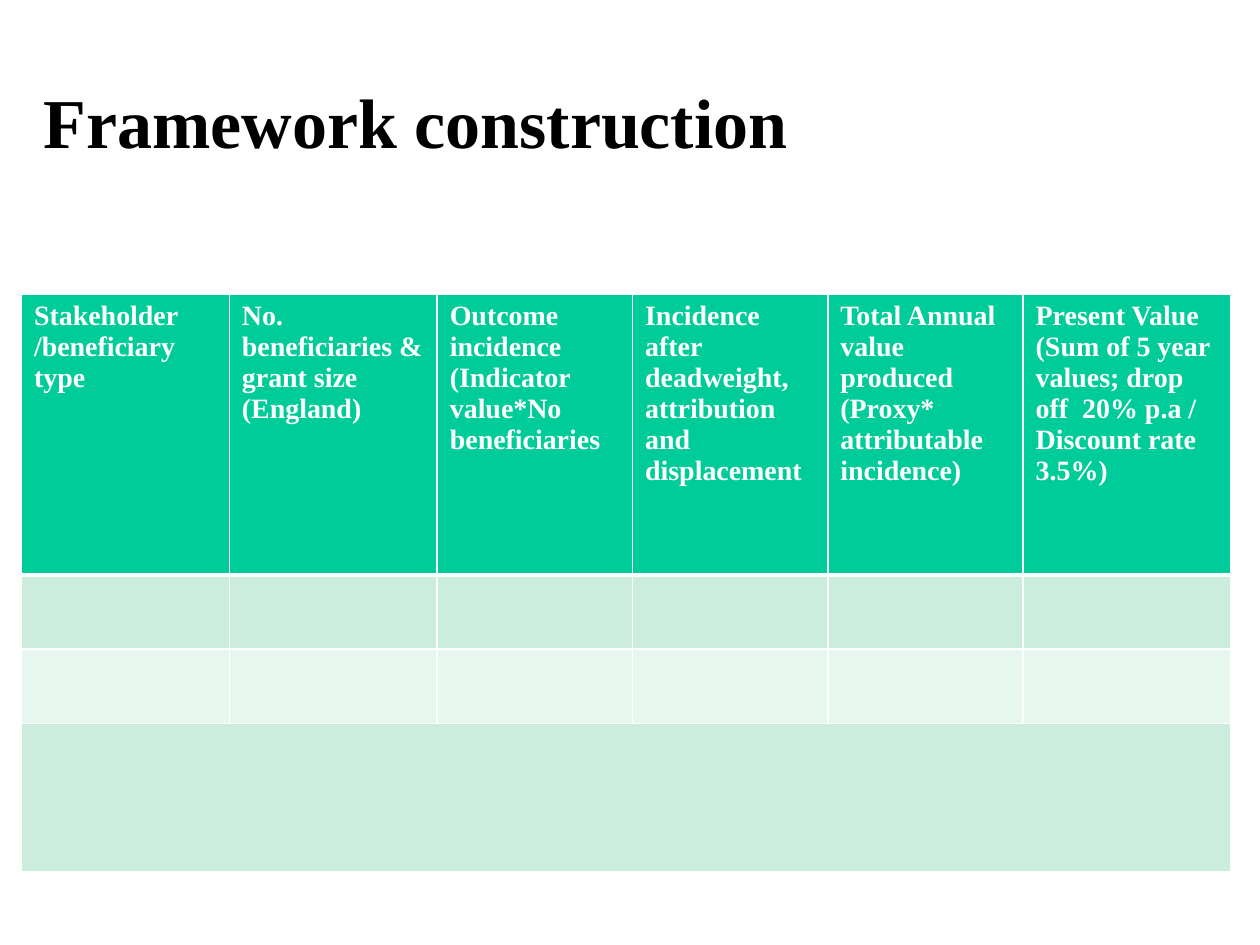
from dataclasses import dataclass

from lxml.etree import SubElement
from pptx import Presentation
from pptx.dml.color import RGBColor as Rgb
from pptx.enum.text import MSO_ANCHOR as Anchor
from pptx.oxml.ns import qn
from pptx.util import Inches, Pt

COLORS = {
    "ink": "000000",
    "white": "FFFFFF",
    "header": "00CC99",
    "band": "CCECDE",
    "pale": "E7F6EF",
}
WIDTH, HEIGHT = Inches(10), Inches(7.5)
FONT = "Times New Roman"
TITLE_FORMAT = {"name": FONT, "size": Pt(40), "bold": True}
HEADER_FORMAT = {"name": FONT, "size": Pt(16), "bold": True}
THIN, THICK = Pt(1), Pt(3)


@dataclass(frozen=True)
class Area:
    left: float
    top: float
    width: float
    height: float

    def lengths(self) -> tuple[int, int, int, int]:
        return (int(self.left * WIDTH), int(self.top * HEIGHT),
                int(self.width * WIDTH), int(self.height * HEIGHT))


@dataclass(frozen=True)
class Column:
    share: float
    heading: tuple[str, ...]


@dataclass(frozen=True)
class Row:
    inches: float
    fill: str


TITLE_AREA = Area(0.025, 0.044, 0.658, 0.167)
TABLE_AREA = Area(0.017, 0.311, 0.958, 0.611)
WIDE, NARROW = 0.165, 0.155
COLUMNS = (
    Column(WIDE, ("Stakeholder /beneficiary type",)),
    Column(WIDE, ("No. beneficiaries & grant size (England)",)),
    Column(NARROW, ("Outcome incidence (Indicator value*No beneficiaries",)),
    Column(NARROW, ("Incidence after deadweight, attribution and displacement",)),
    Column(NARROW, ("Total Annual value produced (Proxy*", "attributable incidence)")),
    Column(WIDE, ("Present Value",
                  "(Sum of 5 year values; drop off  20% p.a / Discount rate 3.5%)")),
)
ROWS = (Row(2.23, "header"), Row(0.59, "band"), Row(0.59, "pale"), Row(1.18, "band"))


def write(frame, lines: tuple[str, ...], color: str, text_format: dict) -> None:
    for index, line in enumerate(lines):
        para = frame.add_paragraph() if index else frame.paragraphs[0]
        span = para.add_run()
        span.text = line
        span.font.color.rgb = Rgb.from_string(COLORS[color])
        for name, value in text_format.items():
            setattr(span.font, name, value)


def paint(cell, fill: str, top: int, bottom: int) -> None:
    properties = cell._tc.get_or_add_tcPr()
    for side, width in {"L": THIN, "R": THIN, "T": top, "B": bottom}.items():
        border = SubElement(properties, qn(f"a:ln{side}"), w=str(int(width)))
        solid = SubElement(border, qn("a:solidFill"))
        SubElement(solid, qn("a:srgbClr"), val=COLORS["white"])
    cell.fill.solid()
    cell.fill.fore_color.rgb = Rgb.from_string(COLORS[fill])


def add_title(page) -> None:
    frame = page.shapes.add_textbox(*TITLE_AREA.lengths()).text_frame
    frame.word_wrap = True
    frame.vertical_anchor = Anchor.MIDDLE
    write(frame, ("Framework construction",), "ink", TITLE_FORMAT)


def add_framework(page) -> None:
    table = page.shapes.add_table(len(ROWS), len(COLUMNS), *TABLE_AREA.lengths()).table
    for position, column in enumerate(COLUMNS):
        table.columns[position].width = int(column.share * WIDTH)
        write(table.cell(0, position).text_frame, column.heading, "white", HEADER_FORMAT)
    for level, row in enumerate(ROWS):
        table.rows[level].height = Inches(row.inches)
        top = THICK if level == 1 else THIN
        bottom = THICK if level == 0 else THIN
        for position in range(len(COLUMNS)):
            paint(table.cell(level, position), row.fill, top, bottom)
    last = len(ROWS) - 1
    table.cell(last, 0).merge(table.cell(last, len(COLUMNS) - 1))


def main() -> None:
    deck = Presentation()
    deck.slide_width, deck.slide_height = WIDTH, HEIGHT
    page = deck.slides.add_slide(deck.slide_layouts[6])
    add_title(page)
    add_framework(page)
    deck.save("out.pptx")


if __name__ == "__main__":
    main()
